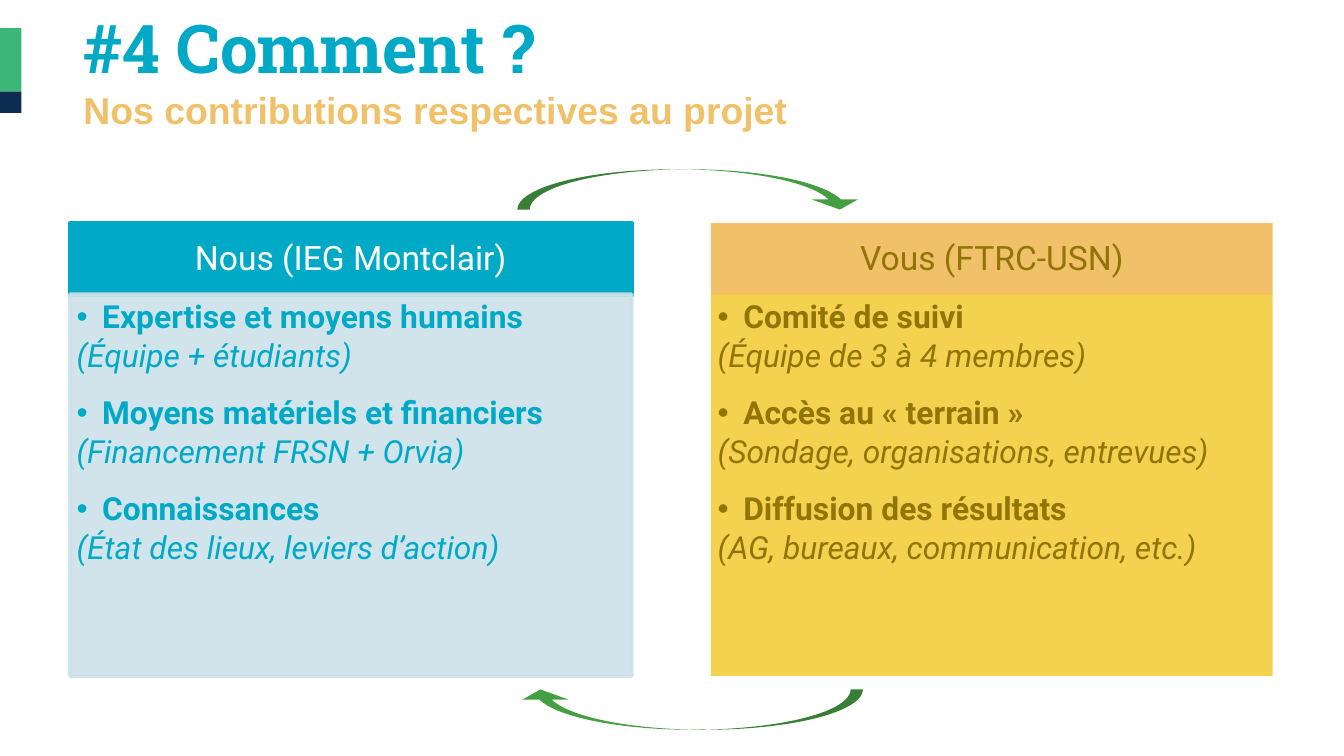
"""Build the slide that compares both partners' contributions to the project."""
from dataclasses import dataclass

from lxml import etree
from pptx import Presentation
from pptx.dml.color import RGBColor
from pptx.enum.shapes import MSO_SHAPE
from pptx.enum.text import MSO_ANCHOR, MSO_AUTO_SIZE, PP_ALIGN
from pptx.oxml.ns import qn
from pptx.util import Inches, Pt

RECT = MSO_SHAPE.RECTANGLE
CURVED_ARROW = MSO_SHAPE.CURVED_DOWN_ARROW
MIDDLE, TOP = MSO_ANCHOR.MIDDLE, MSO_ANCHOR.TOP
LEFT, CENTER = PP_ALIGN.LEFT, PP_ALIGN.CENTER
NO_AUTOFIT = MSO_AUTO_SIZE.NONE

TEAL, SAND, GREEN = "00A9C6", "F0C169", "449F42"
COMPARISON_LAYOUT = 4
CARD_WIDTH = 4.18
HEAD_TOP, HEAD_HEIGHT = 1.66, 0.54
BODY_TOP, BODY_HEIGHT = 2.19, 2.84
HEAD_INSETS = (0.14, 0.08, 0.14, 0.08)
BODY_INSETS = (0.05, 0.05, 0.06, 0.07)
HANGING = 0.19


@dataclass
class Card:
    left: float
    head_idx: int
    head: str
    head_fill: str
    head_color: str
    body_fill: str
    body_color: str
    outlined: bool
    items: list[tuple[str, str]]


CARDS = [
    Card(0.52, 1, "Nous (IEG Montclair)", TEAL, "FFFFFF", "CCE2EA", TEAL, True, [
        ("Expertise et moyens humains", "(Équipe + étudiants)"),
        ("Moyens matériels et financiers", "(Financement FRSN + Orvia)"),
        ("Connaissances", "(État des lieux, leviers d’action)"),
    ]),
    Card(5.29, 3, "Vous (FTRC-USN)", SAND, "927407", "F5CD3D", "927407", False, [
        ("Comité de suivi", "(Équipe de 3 à 4 membres)"),
        ("Accès au « terrain »", "(Sondage, organisations, entrevues)"),
        ("Diffusion des résultats", "(AG, bureaux, communication, etc.)"),
    ]),
]


def rgb(value: str) -> RGBColor:
    return RGBColor.from_string(value)


def place(sp, left: float, top: float, width: float, height: float) -> None:
    sp.left, sp.top = Inches(left), Inches(top)
    sp.width, sp.height = Inches(width), Inches(height)


def paint(sp, color: str, outlined: bool = False) -> None:
    sp.fill.solid()
    sp.fill.fore_color.rgb = rgb(color)
    if outlined:
        sp.line.color.rgb = rgb(color)
        sp.line.width = Pt(2)
    else:
        sp.line.fill.background()


def set_alpha(sp, percent: int) -> None:
    for color in list(sp._element.spPr.iter(qn("a:srgbClr"))):
        etree.SubElement(color, qn("a:alpha"), val=str(percent * 1000))


def set_frame(tf, insets: tuple, anchor) -> None:
    tf.word_wrap = True
    tf.auto_size = NO_AUTOFIT
    tf.vertical_anchor = anchor
    tf.margin_left, tf.margin_top, tf.margin_right, tf.margin_bottom = map(Inches, insets)


def style(r, font: str, size: int, color: str, bold: bool = False, italic: bool = False) -> None:
    r.font.name, r.font.size, r.font.color.rgb = font, Pt(size), rgb(color)
    r.font.bold, r.font.italic = bold, italic


def set_bullet(p, bulleted: bool) -> None:
    pPr = p._p.get_or_add_pPr()
    pPr.set("marL", str(Inches(HANGING)))
    pPr.set("indent", str(-Inches(HANGING)))
    if bulleted:
        etree.SubElement(pPr, qn("a:buFont"), typeface="Arial")
        etree.SubElement(pPr, qn("a:buChar"), char="•")
    else:
        etree.SubElement(pPr, qn("a:buNone"))


def fill_list(tf, items: list[tuple[str, str]], color: str) -> None:
    lines = [line for item in items for line in item]
    tf.text = "\n".join(lines)
    for i, p in enumerate(tf.paragraphs):
        is_point = i % 2 == 0
        p.alignment = LEFT
        p.line_spacing = 0.9
        p.space_before = Pt(9.5 if is_point and i else 0)
        p.space_after = Pt(2.55)
        set_bullet(p, is_point)
        style(p.runs[0], "Roboto", 17, color, bold=is_point, italic=not is_point)


def draw_card(holders: dict, card: Card) -> None:
    head, body = holders[card.head_idx], holders[card.head_idx + 1]
    place(head, card.left, HEAD_TOP, CARD_WIDTH, HEAD_HEIGHT)
    paint(head, card.head_fill, card.outlined)
    set_frame(head.text_frame, HEAD_INSETS, MIDDLE)
    head.text_frame.text = card.head
    p = head.text_frame.paragraphs[0]
    p.alignment, p.line_spacing, p.space_before = CENTER, 0.9, Pt(0)
    style(p.runs[0], "Roboto", 18, card.head_color)

    place(body, card.left, BODY_TOP, CARD_WIDTH, BODY_HEIGHT)
    paint(body, card.body_fill, card.outlined)
    set_alpha(body, 90)
    set_frame(body.text_frame, BODY_INSETS, TOP)
    fill_list(body.text_frame, card.items, card.body_color)


def draw_shape(s, kind, box: tuple, color: str):
    sp = s.shapes.add_shape(kind, *map(Inches, box))
    sp.shadow.inherit = False
    paint(sp, color)
    return sp


def draw_arrow(s, top: float, rotation: int) -> None:
    sp = draw_shape(s, CURVED_ARROW, (3.85, top, 2.57, 0.3), GREEN)
    sp.rotation = rotation
    for i, value in enumerate((0.305, 1.139, 0.25)):
        sp.adjustments[i] = value


def draw_title(title) -> None:
    place(title, 0.52, 0.08, 8.95, 0.87)
    tf = title.text_frame
    set_frame(tf, (0.1, 0.05, 0.1, 0.05), MIDDLE)
    tf.text = "#4 Comment ?\vNos contributions respectives au projet"
    p = tf.paragraphs[0]
    p.alignment = LEFT
    heading, subtitle = p.runs
    style(heading, "Roboto Slab", 36, TEAL, bold=True)
    style(subtitle, "Arial", 20, SAND, bold=True)


def main() -> None:
    prs = Presentation()
    prs.slide_width = Inches(10)
    prs.slide_height = prs.slide_width * 9 // 16
    s = prs.slides.add_slide(prs.slide_layouts[COMPARISON_LAYOUT])
    holders = {sp.placeholder_format.idx: sp for sp in s.placeholders}
    draw_shape(s, RECT, (0, 0.68, 0.16, 0.16), "0D2C52")
    draw_shape(s, RECT, (0, 0.21, 0.16, 0.47), "3CB778")
    draw_title(s.shapes.title)
    for card in CARDS:
        draw_card(holders, card)
    draw_arrow(s, 1.26, 0)
    draw_arrow(s, 5.13, 180)
    prs.save("out.pptx")


if __name__ == "__main__":
    main()
